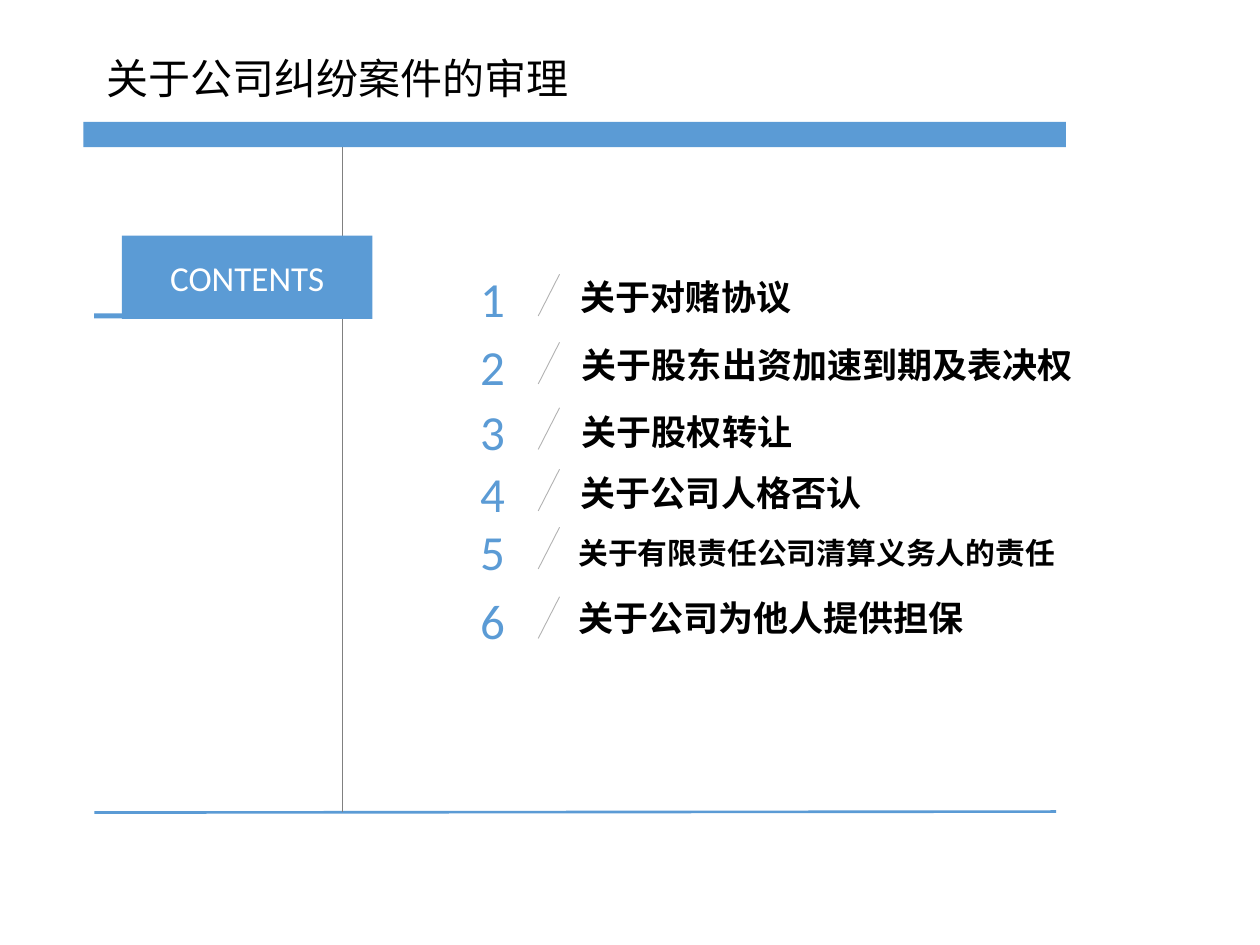
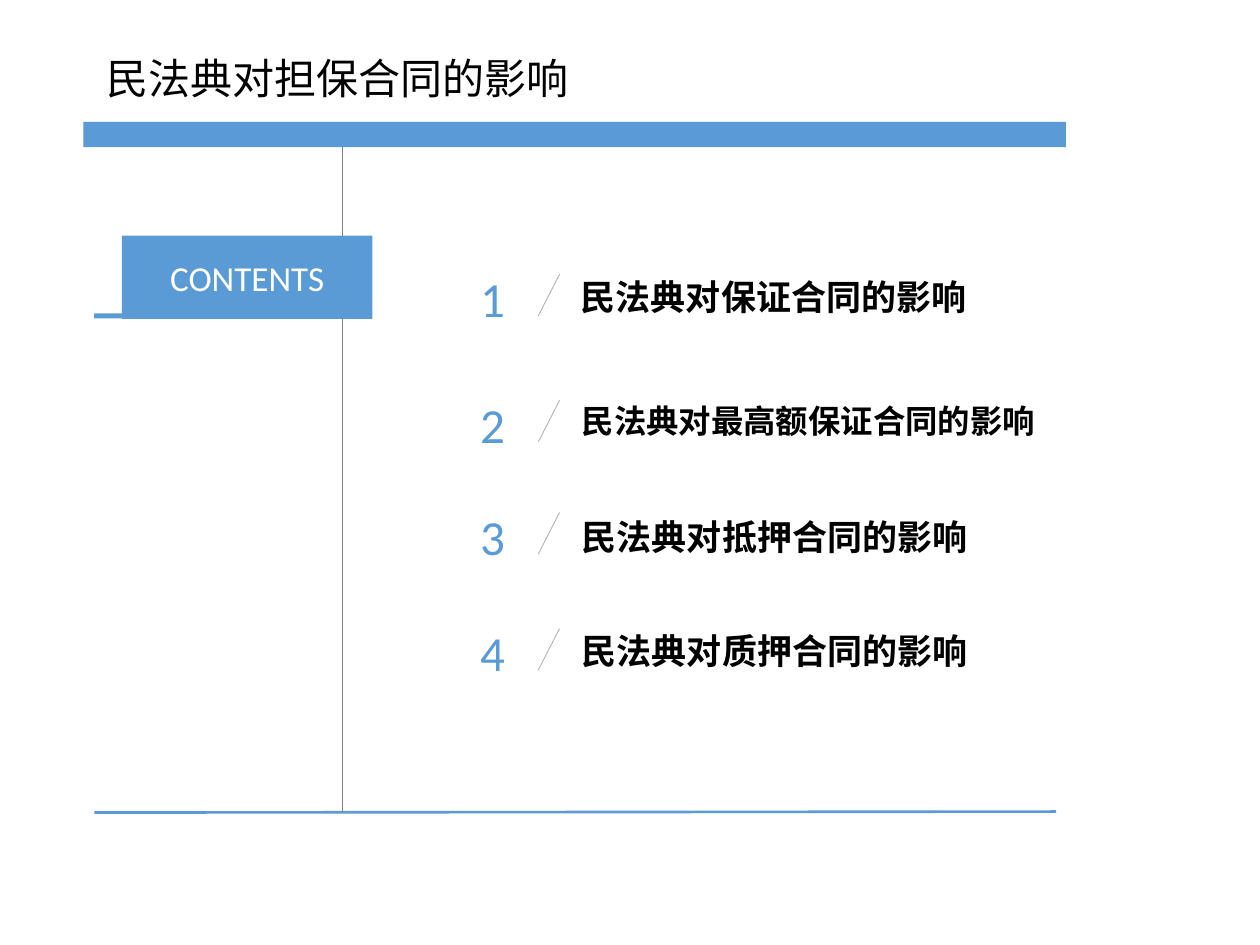
"""Build two contents slides on company disputes and guarantee contracts."""
import pptx
import pptx.util
import pptx.dml.color
import pptx.enum.shapes
import pptx.enum.text
import pptx.oxml.ns
import lxml.etree

Cm = pptx.util.Cm
Pt = pptx.util.Pt
qn = pptx.oxml.ns.qn
RGBColor = pptx.dml.color.RGBColor
ALIGN = pptx.enum.text.PP_ALIGN
RECT = pptx.enum.shapes.MSO_SHAPE.RECTANGLE
STRAIGHT = pptx.enum.shapes.MSO_CONNECTOR.STRAIGHT

BLUE = RGBColor(0x5B, 0x9B, 0xD5)
GREY = RGBColor(0x80, 0x80, 0x80)
PALE = RGBColor(0xB2, 0xB2, 0xB2)
BLACK = RGBColor(0, 0, 0)
WHITE = RGBColor(255, 255, 255)
LATIN = "Calibri"
HAN = "Noto Sans CJK SC"

DECKS = [
    ("关于公司纠纷案件的审理", [
        ("关于对赌协议", 11.71, 5.08, 9.22, 20, 1.5, 5.26),
        ("关于股东出资加速到期及表决权", 11.73, 6.45, 10.72, 20, 1.5, 6.63),
        ("关于股权转让", 11.73, 7.8, 9.22, 20, 1.5, 7.95),
        ("关于公司人格否认", 11.71, 9.04, 9.22, 20, 1.5, 9.19),
        ("关于有限责任公司清算义务人的责任", 11.66, 10.31, 9.83, 17, 1.4, 10.36),
        ("关于公司为他人提供担保", 11.66, 11.56, 9.22, 20, 1.5, 11.76),
    ]),
    ("民法典对担保合同的影响", [
        ("民法典对保证合同的影响", 11.71, 5.08, 9.22, 20, 1.5, 5.26),
        ("民法典对最高额保证合同的影响", 11.73, 7.59, 9.75, 18.5, 1.5, 7.8),
        ("民法典对抵押合同的影响", 11.73, 9.91, 9.22, 20, 1.5, 10.06),
        ("民法典对质押合同的影响", 11.73, 12.22, 9.22, 20, 1.5, 12.4),
    ]),
]


def write(shape, text, face, size, color, align=ALIGN.LEFT, bold=False, space=1.0, pad=0):
    frame = shape.text_frame
    frame.word_wrap = True
    frame.vertical_anchor = pptx.enum.text.MSO_ANCHOR.MIDDLE
    frame.margin_left = frame.margin_right = Cm(pad)
    frame.margin_top = frame.margin_bottom = Cm(pad / 2)
    para = frame.paragraphs[0]
    para.text = text
    para.alignment = align
    para.line_spacing = space
    font = para.font
    font.name, font.size, font.bold = face, Pt(size), bold
    font.color.rgb = color
    props = para._p.pPr.find(qn("a:defRPr"))
    lxml.etree.SubElement(props, qn("a:ea")).set("typeface", face)


def rule(shapes, ends, color, width):
    line = shapes.add_connector(STRAIGHT, *[Cm(end) for end in ends])
    line.line.color.rgb = color
    line.line.width = Pt(width)
    lxml.etree.SubElement(line._element.spPr, qn("a:effectLst"))


deck = pptx.Presentation()
deck.slide_width, deck.slide_height = Cm(25.4), Cm(19.05)

for title, rows in DECKS:
    shapes = deck.slides.add_slide(deck.slide_layouts[6]).shapes
    rule(shapes, (1.9, 16.38, 21.29, 16.36), BLUE, 1.5)
    rule(shapes, (6.91, 2.97, 6.91, 16.36), GREY, 0.5)

    for place, label in [
        ((2.46, 4.75, 5.05, 1.68), "CONTENTS"),
        ((1.9, 6.32, 5, 0.1), ""),
        ((1.68, 2.46, 19.81, 0.51), ""),
    ]:
        block = shapes.add_shape(RECT, *[Cm(size) for size in place])
        block.shadow.inherit = False
        block.fill.solid()
        block.fill.fore_color.rgb = BLUE
        block.line.fill.background()
        if label:
            write(block, label, LATIN, 20, WHITE, ALIGN.CENTER)

    head = shapes.add_textbox(Cm(1.9), Cm(0.94), Cm(10.24), Cm(1.27))
    write(head, title, HAN, 24, BLACK, pad=0.25)
    head.text_frame.auto_size = pptx.enum.text.MSO_AUTO_SIZE.SHAPE_TO_FIT_TEXT

    for count, (topic, left, top, width, size, space, level) in enumerate(rows, 1):
        group = shapes.add_group_shape().shapes
        box = group.add_textbox(Cm(left), Cm(top), Cm(width), Cm(1.37))
        write(box, topic, HAN, size, BLACK, bold=True, space=space)
        mark = group.add_textbox(Cm(8.18), Cm(level), Cm(2), Cm(1.37))
        write(mark, str(count), LATIN, 28, BLUE, ALIGN.RIGHT, space=1.1)
        rule(group, (11.28, level + 0.27, 10.85, level + 1.11), PALE, 0.5)

deck.save("out.pptx")
